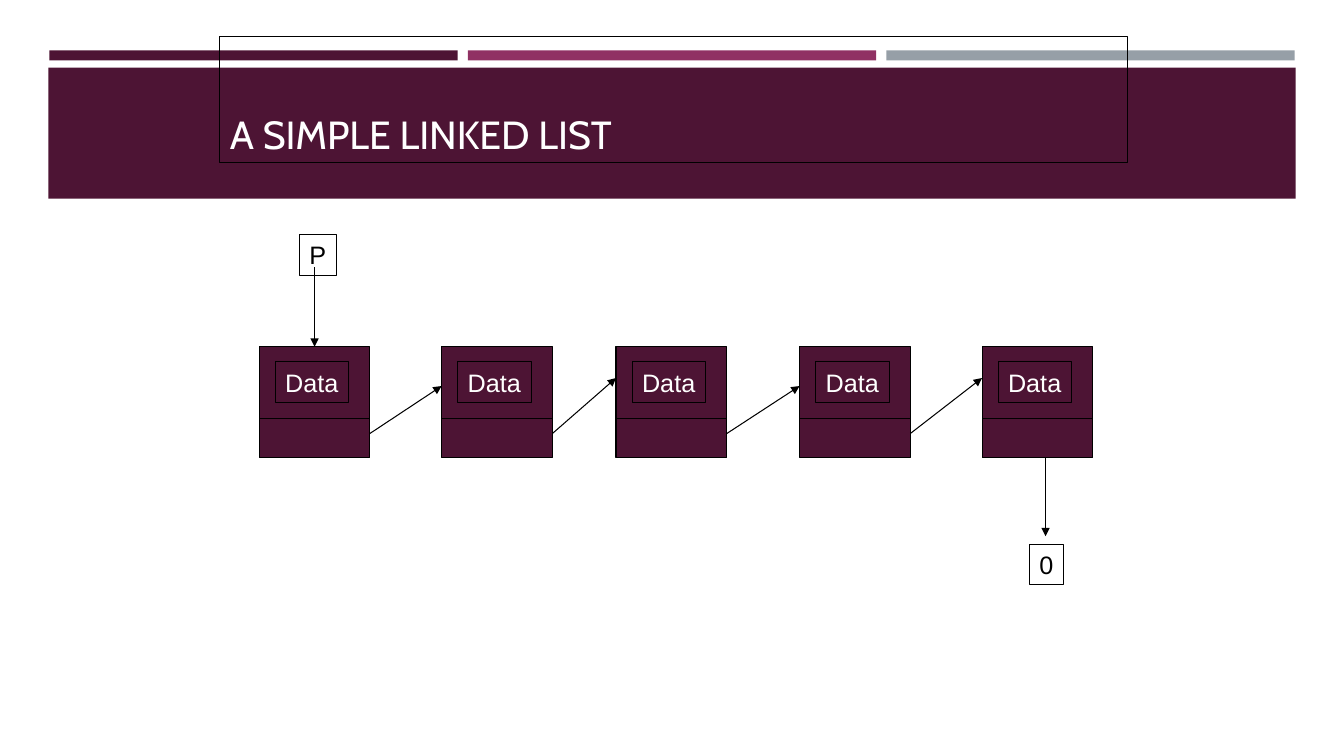
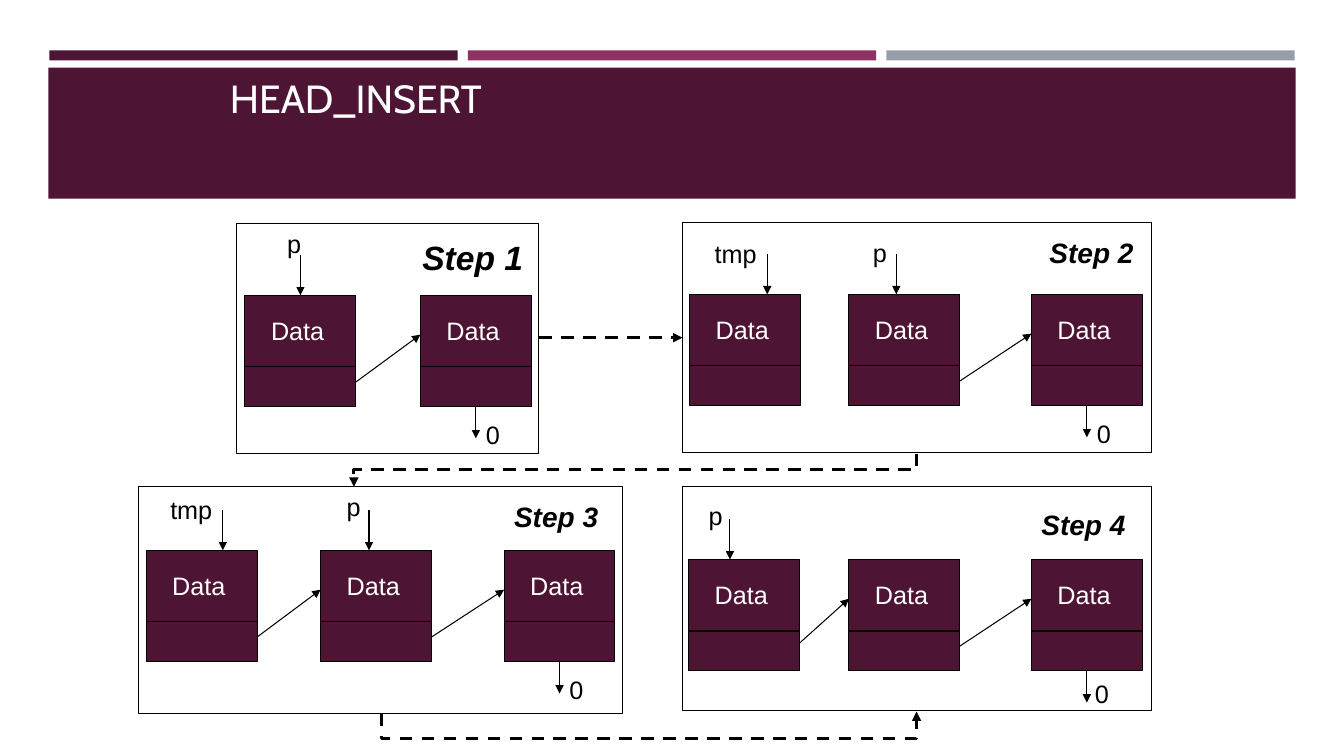
from dataclasses import dataclass

from lxml.etree import SubElement
from pptx import Presentation
from pptx.dml.color import RGBColor
from pptx.enum.dml import MSO_LINE
from pptx.enum.shapes import MSO_CONNECTOR, MSO_SHAPE
from pptx.enum.text import MSO_ANCHOR, MSO_AUTO_SIZE, PP_ALIGN
from pptx.oxml.ns import qn
from pptx.util import Inches, Pt

PLUM = "4D1434"
MAGENTA = "903163"
GRAY = "969FA7"
BLACK = "000000"
WHITE = "FFFFFF"
NODE_SIZE = 1.1
TEXT_HEIGHT = 0.4


@dataclass
class Pointer:
    name: str
    arrow: float
    label: tuple
    width: float = 0.34


@dataclass
class Step:
    title: str
    box: tuple
    title_at: tuple
    node_top: float
    nodes: tuple
    pointers: tuple
    links: tuple
    title_size: int = 20
    zero_at: tuple = (0, 1.18)


STEPS = (
    Step("Step 1", (2.35, 2.22, 2.99, 2.28), (1.74, 0.08, 1.2, 0.5), 0.71,
         (0.08, 1.82), (Pointer("p", 0.63, (0.4, 0)),), ((0, 0.86),), title_size=24),
    Step("Step 2", (6.77, 2.21, 4.65, 2.28), (3.54, 0.08, 1.03, 0.43), 0.71,
         (0.07, 1.65, 3.46),
         (Pointer("tmp", 0.84, (0.22, 0.11), 0.62), Pointer("p", 2.12, (1.79, 0.1))),
         ((1, 0.86),)),
    Step("Step 3", (1.37, 4.83, 4.8, 2.25), (3.63, 0.08, 1.03, 0.43), 0.63,
         (0.08, 1.81, 3.63),
         (Pointer("tmp", 0.84, (0.22, 0.03), 0.62), Pointer("p", 2.29, (1.97, 0))),
         ((0, 0.86), (1, 0.86))),
    Step("Step 4", (6.77, 4.83, 4.65, 2.22), (3.46, 0.16, 1.03, 0.43), 0.72,
         (0.06, 1.65, 3.46), (Pointer("p", 0.47, (0.16, 0.08)),),
         ((0, 0.83), (1, 0.86)), zero_at=(-0.02, 1.13)),
)


def color(value):
    return RGBColor.from_string(value)


def outline(shape, width=0.75):
    shape.line.color.rgb = color(BLACK)
    shape.line.width = Pt(width)


def write_text(shape, text, size=18, font="Arial", fill=BLACK, bold=False, italic=False,
               anchor=MSO_ANCHOR.TOP, wrap=False):
    frame = shape.text_frame
    frame.auto_size = MSO_AUTO_SIZE.NONE
    frame.word_wrap = wrap
    frame.vertical_anchor = anchor
    paragraph = frame.paragraphs[0]
    paragraph.alignment = PP_ALIGN.LEFT
    run = paragraph.add_run()
    run.text = text
    run.font.size = Pt(size)
    run.font.name = font
    run.font.bold = bold
    run.font.italic = italic
    run.font.color.rgb = color(fill)


def add_label(shapes, text, box, framed=False, **text_format):
    label = shapes.add_textbox(*map(Inches, box))
    write_text(label, text, **text_format)
    if framed:
        outline(label)


def add_rectangle(shapes, box, fill=None, lined=True):
    rectangle = shapes.add_shape(MSO_SHAPE.RECTANGLE, *map(Inches, box))
    rectangle.shadow.inherit = False
    if fill:
        rectangle.fill.solid()
        rectangle.fill.fore_color.rgb = color(fill)
    else:
        rectangle.fill.background()
    if lined:
        outline(rectangle)
    else:
        rectangle.line.fill.background()
    return rectangle


def add_line(shapes, start, end, arrow=True, dashed=False, kind=MSO_CONNECTOR.STRAIGHT):
    line = shapes.add_connector(kind, *map(Inches, (*start, *end)))
    outline(line, 2.25 if dashed else 0.75)
    if dashed:
        line.line.dash_style = MSO_LINE.DASH
    if arrow:
        SubElement(line.line._get_or_add_ln(), qn("a:tailEnd"), type="triangle")
    SubElement(line.element.spPr, qn("a:effectLst"))
    return line


def add_vertical_elbow(shapes, start, end, turn):
    center_x, center_y = (start[0] + end[0]) / 2, (start[1] + end[1]) / 2
    offset_x, offset_y = start[0] - center_x, start[1] - center_y
    line = add_line(shapes, (center_x + offset_y, center_y - offset_x),
                    (center_x - offset_y, center_y + offset_x),
                    dashed=True, kind=MSO_CONNECTOR.ELBOW)
    properties = line.element.spPr
    properties.find(qn("a:xfrm")).set("rot", "5400000")
    adjustments = properties.find(qn("a:prstGeom")).find(qn("a:avLst"))
    ratio = (turn - start[1]) / (end[1] - start[1])
    SubElement(adjustments, qn("a:gd"), name="adj1", fmla=f"val {round(ratio * 100000)}")


def add_node(shapes, left, top, framed=False):
    node = shapes.add_group_shape().shapes
    add_rectangle(node, (left, top, NODE_SIZE, NODE_SIZE), PLUM)
    divider = top + 0.71
    add_line(node, (left, divider), (left + NODE_SIZE, divider), arrow=False)
    add_label(node, "Data", (left + 0.16, top + 0.15, 0.73, TEXT_HEIGHT), framed, fill=WHITE)


def add_link(shapes, left, next_left, top, leave=0.86, arrive=0.39):
    add_line(shapes, (left + NODE_SIZE, top + leave), (next_left, top + arrive))


def add_bands(layout, slide):
    bands = [((0.49 + 4.15 * index, 0.5, 4.05, 0.1), fill)
             for index, fill in enumerate((PLUM, MAGENTA, GRAY))]
    bands.append(((0.48, 0.67, 12.37, 1.3), PLUM))
    for box, fill in bands:
        band = add_rectangle(slide.shapes, box, fill, lined=False)
        layout.shapes.element.insert(2, band.element)


def add_title(slide, text, top, framed=False):
    title = slide.shapes.title
    title.left, title.top, title.width, title.height = map(Inches, (2.18, top, 9, 1.25))
    write_text(title, text, size=28, font="Cabin", fill=WHITE,
               anchor=MSO_ANCHOR.BOTTOM, wrap=True)
    if framed:
        outline(title)


def add_list_diagram(shapes, left, top):
    node_top = top + 1.11
    lefts = [left + offset for offset in (0, 1.81, 3.54, 5.36, 7.17)]
    for node_left in lefts:
        add_node(shapes, node_left, node_top, framed=True)
    for index, pair in enumerate(zip(lefts, lefts[1:])):
        add_link(shapes, *pair, node_top, arrive=0.31 if index % 2 else 0.39)
    head = left + 0.55
    add_line(shapes, (head, top + 0.32), (head, node_top))
    add_label(shapes, "P", (left + 0.4, top, 0.37, TEXT_HEIGHT), framed=True)
    tail, bottom = lefts[-1] + 0.63, node_top + NODE_SIZE
    add_line(shapes, (tail, bottom), (tail, bottom + 0.78))
    add_label(shapes, "0", (tail - 0.16, bottom + 0.86, 0.34, TEXT_HEIGHT), framed=True)


def add_step(shapes, step):
    left, top = step.box[:2]
    group = shapes.add_group_shape().shapes
    add_rectangle(group, step.box)
    node_top = top + step.node_top
    lefts = [left + offset for offset in step.nodes]
    for node_left in lefts:
        add_node(group, node_left, node_top)
    for index, leave in step.links:
        add_link(group, lefts[index], lefts[index + 1], node_top, leave)
    for pointer in step.pointers:
        arrow = left + pointer.arrow
        add_line(group, (arrow, node_top - 0.4), (arrow, node_top))
        label_left, label_top = pointer.label
        add_label(group, pointer.name,
                  (left + label_left, top + label_top, pointer.width, TEXT_HEIGHT))
    tail, bottom = lefts[-1] + NODE_SIZE / 2, node_top + NODE_SIZE
    add_line(group, (tail, bottom), (tail, bottom + 0.32))
    zero_left, zero_top = step.zero_at
    add_label(group, "0", (tail + zero_left, node_top + zero_top, 0.34, TEXT_HEIGHT))
    title_left, title_top, width, height = step.title_at
    add_label(group, step.title, (left + title_left, top + title_top, width, height),
              size=step.title_size, bold=True, italic=True)


def build_linked_list(slide):
    add_title(slide, "A SIMPLE LINKED LIST", 0.36, framed=True)
    add_list_diagram(slide.shapes, 2.57, 2.33)


def build_head_insert(slide):
    add_title(slide, "HEAD_INSERT", 0)
    for step in STEPS:
        add_step(slide.shapes, step)
    add_line(slide.shapes, (5.35, 3.35), (6.77, 3.35), dashed=True)
    add_vertical_elbow(slide.shapes, (9.09, 4.5), (3.51, 4.83), 4.66)
    add_vertical_elbow(slide.shapes, (3.78, 7.08), (9.09, 7.06), 7.33)


def main():
    presentation = Presentation()
    presentation.slide_width = Inches(13.33)
    presentation.slide_height = Inches(7.5)
    layout = presentation.slide_layouts[5]
    slides = [presentation.slides.add_slide(layout) for _ in range(2)]
    add_bands(layout, slides[0])
    build_linked_list(slides[0])
    build_head_insert(slides[1])
    presentation.save("out.pptx")


if __name__ == "__main__":
    main()
